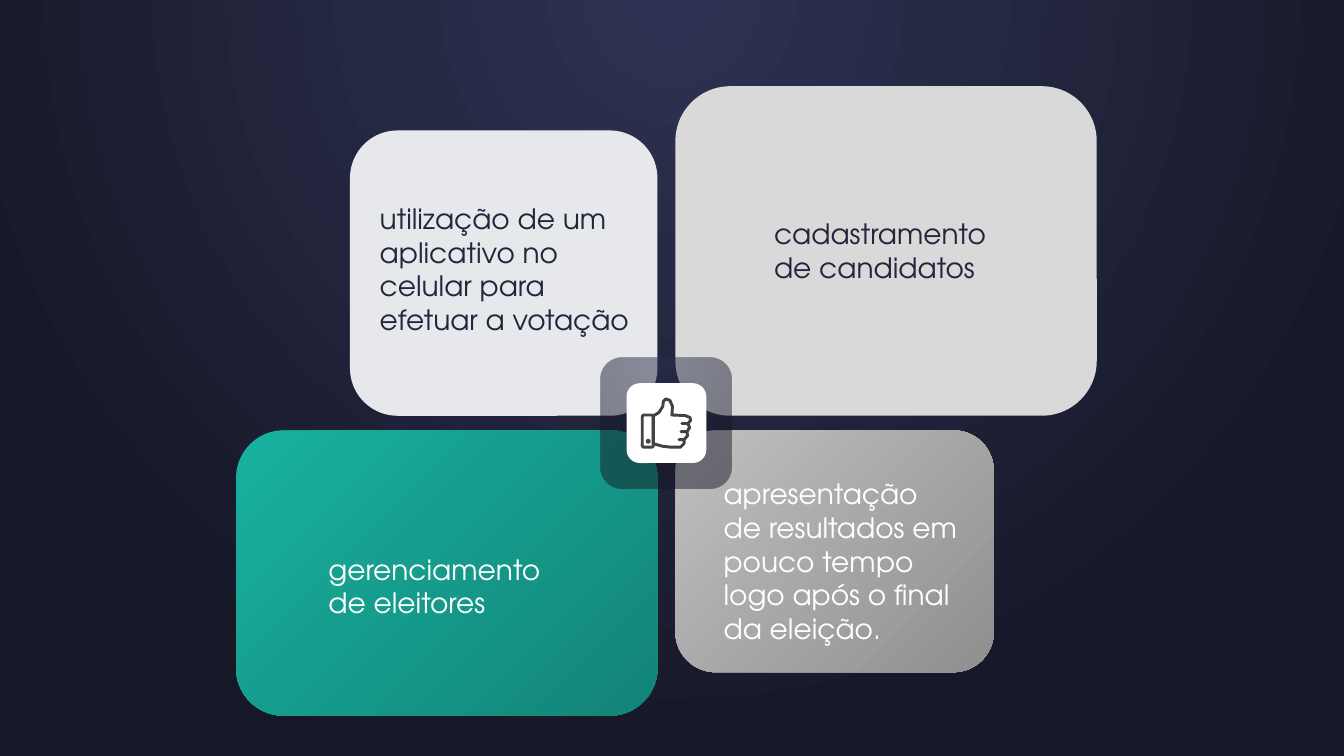
"""Build a slide of four voting-system feature cards around a thumbs-up badge."""
from dataclasses import dataclass

from pptx import Presentation
from pptx.dml.color import RGBColor
from pptx.enum.shapes import MSO_SHAPE
from pptx.oxml.ns import qn
from pptx.util import Pt
from lxml import etree

ROUNDED = MSO_SHAPE.ROUNDED_RECTANGLE
OVAL = MSO_SHAPE.OVAL


@dataclass(frozen=True)
class Theme:
    font: str = "TeX Gyre Adventor"
    size: float = 20
    night: tuple = ("2E3252", "161828")
    teal: tuple = ("18B09E", "128477")
    silver: tuple = ("BFBFBF", "8F8F8F")
    light: str = "D9D9D9"
    pale: str = "E7E8EB"
    white: str = "FFFFFF"
    ink: str = "23253D"
    icon: str = "424242"


THEME = Theme()
SLIDE_SIZE = (960, 540)
HUB = (476, 302.2)
GAP = (12.8, 10.4)
BADGE_SIZE, TILE_SIZE, ICON_SIZE = 93.6, 57, 36.7
ICON_LINE = 2.1

# Each card: side of hub (x, y), card size, fill, text, text box, text colour.
CARDS = [
    ((-1, 1), (301, 203.8), THEME.teal, "gerenciamento de eleitores",
     (227.5, 391, 179.3, 55.4), THEME.white),
    ((1, -1), (301, 235.4), THEME.light, "cadastramento de candidatos",
     (545.8, 151.2, 187.9, 55.4), THEME.ink),
    ((-1, -1), (219.6, 203.8), THEME.pale,
     "utilização de um aplicativo no celular para efetuar a votação",
     (264.2, 140.4, 203.8, 104.4), THEME.ink),
    ((1, 1), (227.5, 172.8), THEME.silver,
     "apresentação de resultados em pouco tempo logo após o final da eleição.",
     (509.8, 337, 185, 128.2), THEME.white),
]

HAND = [
    (8.8, 13.4), (13, 10.8), (15.8, 6.5), (16.2, 2.9), (18, 1.1), (20.9, 2.2),
    (22.7, 6.5), (22.3, 12.6), (31.7, 13), (35.3, 14.4), (35.6, 16.6),
    (33.8, 18.7), (29.5, 18.7), (33.8, 18.7), (34.9, 21.6), (33.1, 24.5),
    (28.8, 24.5), (33.1, 24.5), (33.5, 27.4), (31, 30.2), (27.4, 30.2),
    (31, 30.2), (31, 33), (28.4, 35.6), (21.6, 35.6), (15.5, 34.9), (8.8, 33),
]
CUFF = (1.1, 12.6, 7.9, 23)
BUTTON = (3.6, 29.6, 3.5, 3.5)


def color(value):
    return RGBColor.from_string(value)


def set_gradient(fill, colors, angle=315):
    fill.gradient()
    fill.gradient_angle = angle
    for stop, value, position in zip(fill.gradient_stops, colors, (0.02, 1)):
        stop.color.rgb = color(value)
        stop.position = position


def make_radial(element, alpha=None):
    gradient = next(element.iter(qn("a:gradFill")))
    gradient.remove(gradient.find(qn("a:lin")))
    circle = etree.SubElement(gradient, qn("a:path"), path="circle")
    etree.SubElement(circle, qn("a:fillToRect"),
                     l="50000", t="-80000", r="50000", b="180000")
    if alpha is not None:
        for stop_color in gradient.iter(qn("a:srgbClr")):
            etree.SubElement(stop_color, qn("a:alpha"), val=str(alpha * 1000))


def style_shape(shape, fill=None, line=None):
    shape.shadow.inherit = False
    if fill is None:
        shape.fill.background()
    elif isinstance(fill, tuple):
        set_gradient(shape.fill, fill)
    else:
        shape.fill.solid()
        shape.fill.fore_color.rgb = color(fill)
    if line is None:
        shape.line.fill.background()
    else:
        shape.line.color.rgb = color(line)
        shape.line.width = Pt(ICON_LINE)
    return shape


def add_shape(slide, kind, box, fill=None, line=None):
    shape = slide.shapes.add_shape(kind, *map(Pt, box))
    return style_shape(shape, fill, line)


def add_text(slide, text, box, *, text_color, size=THEME.size, font=THEME.font):
    frame = slide.shapes.add_textbox(*map(Pt, box)).text_frame
    frame.word_wrap = True
    paragraph = frame.paragraphs[0]
    run = paragraph.add_run()
    run.text = text
    run.font.name = font
    run.font.size = Pt(size)
    run.font.color.rgb = color(text_color)


def card_box(side, size):
    corner = [
        center + direction * gap / 2 - (length if direction < 0 else 0)
        for center, direction, gap, length in zip(HUB, side, GAP, size)
    ]
    return (*corner, *size)


def centered_box(size):
    return (HUB[0] - size / 2, HUB[1] - size / 2, size, size)


def add_thumb(slide):
    left, top = centered_box(ICON_SIZE)[:2]
    points = [(Pt(left + x), Pt(top + y)) for x, y in HAND]
    builder = slide.shapes.build_freeform(*points[0])
    builder.add_line_segments(points[1:], close=True)
    style_shape(builder.convert_to_shape(), line=THEME.icon)
    for kind, (x, y, width, height), fill, line in (
        (ROUNDED, CUFF, None, THEME.icon),
        (OVAL, BUTTON, THEME.icon, None),
    ):
        add_shape(slide, kind, (left + x, top + y, width, height), fill, line)


def main():
    presentation = Presentation()
    presentation.slide_width, presentation.slide_height = map(Pt, SLIDE_SIZE)
    slide = presentation.slides.add_slide(presentation.slide_layouts[6])
    set_gradient(slide.background.fill, THEME.night)
    make_radial(slide.element)

    for side, size, fill, *_ in CARDS:
        add_shape(slide, ROUNDED, card_box(side, size), fill)

    badge = add_shape(slide, ROUNDED, centered_box(BADGE_SIZE), THEME.night)
    make_radial(badge.element, alpha=50)
    add_shape(slide, ROUNDED, centered_box(TILE_SIZE), THEME.white)
    add_thumb(slide)

    for *_, text, box, text_color in CARDS:
        add_text(slide, text, box, text_color=text_color)
    presentation.save("out.pptx")


if __name__ == "__main__":
    main()
